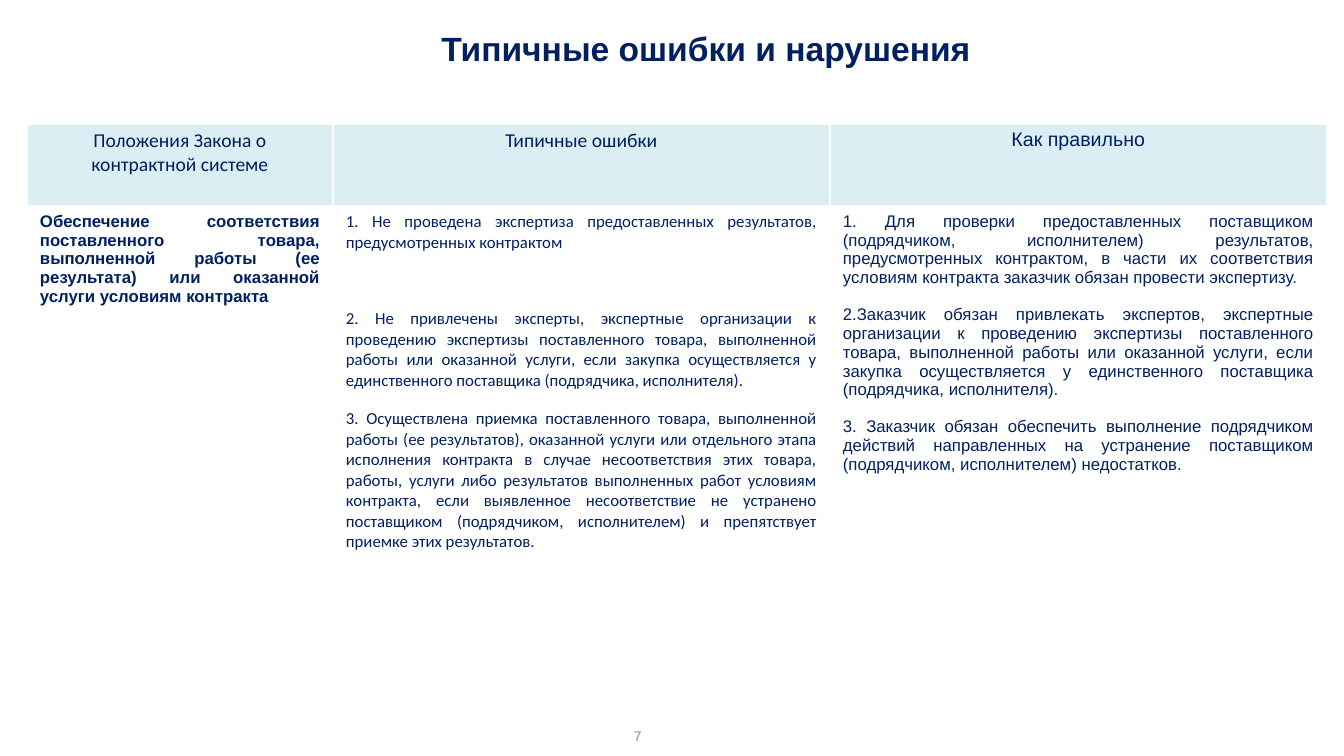
from lxml.etree import SubElement
from pptx import Presentation
from pptx.dml.color import RGBColor
from pptx.enum.text import MSO_ANCHOR, PP_ALIGN
from pptx.oxml.ns import qn
from pptx.util import Emu, Pt

NAVY = "002060"
PALE_BLUE = "DBEEF4"
WHITE = "FFFFFF"
GREY = "8C8D9D"


def px(length):
    """Turn pixels, 100.8 to the inch, into EMU."""
    return Emu(round(length * 914400 / 100.8))


def write(paragraph, text, size=12, font="Arial", color=NAVY, bold=False,
          align=PP_ALIGN.LEFT, space_before=0, numbered=False):
    paragraph.alignment = align
    paragraph.space_before = Pt(space_before)
    if numbered:
        properties = paragraph._p.get_or_add_pPr()
        properties.set("marL", "0")
        properties.set("indent", "0")
        SubElement(properties, qn("a:buFont"), typeface="+mj-lt")
        SubElement(properties, qn("a:buAutoNum"), type="arabicPeriod")
    run = paragraph.add_run()
    run.text = text
    run.font.size = Pt(size)
    run.font.name = font
    run.font.bold = bold
    run.font.color.rgb = RGBColor.from_string(color)


presentation = Presentation()
presentation.slide_width = px(1344)
presentation.slide_height = px(756)
slide = presentation.slides.add_slide(presentation.slide_layouts[5])

# Title
title = slide.shapes.title
title.left, title.top, title.width, title.height = px(68), px(0), px(1276), px(97)
title.text_frame.vertical_anchor = MSO_ANCHOR.MIDDLE
write(title.text_frame.paragraphs[0], "Типичные ошибки и нарушения",
      size=24, bold=True, align=PP_ALIGN.CENTER)

# Table: each column has a heading, a font for each row, and (space before, text) items
columns = [
    {"width": 306, "heading": "Положения Закона о контрактной системе",
     "heading_font": "Calibri", "font": "Arial", "bold": True, "numbered": False,
     "items": [
         (0, "Обеспечение соответствия поставленного товара, выполненной работы "
             "(ее результата) или оказанной услуги условиям контракта"),
     ]},
    {"width": 497, "heading": "Типичные ошибки",
     "heading_font": "Calibri", "font": "Calibri", "bold": False, "numbered": True,
     "items": [
         (0, " Не проведена экспертиза предоставленных результатов, "
             "предусмотренных контрактом"),
         (40, " Не привлечены эксперты, экспертные организации к проведению "
              "экспертизы поставленного товара, выполненной работы или оказанной "
              "услуги, если закупка осуществляется у единственного поставщика "
              "(подрядчика, исполнителя)."),
         (13, " Осуществлена приемка поставленного товара, выполненной работы "
              "(ее результатов), оказанной услуги или отдельного этапа исполнения "
              "контракта в случае несоответствия этих товара, работы, услуги либо "
              "результатов выполненных работ условиям контракта, если выявленное "
              "несоответствие не устранено поставщиком (подрядчиком, исполнителем) "
              "и препятствует приемке этих результатов."),
     ]},
    {"width": 497, "heading": "Как правильно",
     "heading_font": "Arial", "font": "Arial", "bold": False, "numbered": True,
     "items": [
         (0, " Для проверки предоставленных поставщиком (подрядчиком, "
             "исполнителем) результатов, предусмотренных контрактом, в части их "
             "соответствия условиям контракта заказчик обязан провести экспертизу."),
         (13, "Заказчик обязан привлекать экспертов, экспертные организации к "
              "проведению экспертизы поставленного товара, выполненной работы или "
              "оказанной услуги, если закупка осуществляется у единственного "
              "поставщика (подрядчика, исполнителя)."),
         (13, " Заказчик обязан обеспечить выполнение подрядчиком действий "
              "направленных на устранение поставщиком (подрядчиком, исполнителем) "
              "недостатков."),
     ]},
]
row_heights = [83, 393]
table = slide.shapes.add_table(
    len(row_heights), len(columns), px(27), px(124),
    px(sum(column["width"] for column in columns)), px(sum(row_heights))).table
table.first_row = False
table.horz_banding = False
for row, height in zip(table.rows, row_heights):
    row.height = px(height)

for index, column in enumerate(columns):
    table.columns[index].width = px(column["width"])
    heading, body = table.cell(0, index), table.cell(1, index)
    for cell, fill in ((heading, PALE_BLUE), (body, WHITE)):
        cell.margin_left = cell.margin_right = px(13)
        cell.margin_top = cell.margin_bottom = px(5)
        for side in ("lnL", "lnR", "lnT", "lnB"):
            thick = side == "lnB" and cell is heading or side == "lnT" and cell is body
            border = SubElement(cell._tc.get_or_add_tcPr(), qn(f"a:{side}"),
                                w=str(Pt(3 if thick else 1)))
            SubElement(SubElement(border, qn("a:solidFill")), qn("a:srgbClr"), val=WHITE)
        cell.fill.solid()
        cell.fill.fore_color.rgb = RGBColor.from_string(fill)

    write(heading.text_frame.paragraphs[0], column["heading"], size=14,
          font=column["heading_font"], align=PP_ALIGN.CENTER)
    for number, (space_before, text) in enumerate(column["items"]):
        frame = body.text_frame
        paragraph = frame.add_paragraph() if number else frame.paragraphs[0]
        write(paragraph, text, font=column["font"], bold=column["bold"],
              align=PP_ALIGN.JUSTIFY, space_before=space_before,
              numbered=column["numbered"])

# Page number
page_number = slide.shapes.add_textbox(px(624), px(723), px(294), px(25))
page_number.text_frame.word_wrap = True
page_number.text_frame.vertical_anchor = MSO_ANCHOR.MIDDLE
write(page_number.text_frame.paragraphs[0], "7", size=10, color=GREY)

presentation.save("out.pptx")
